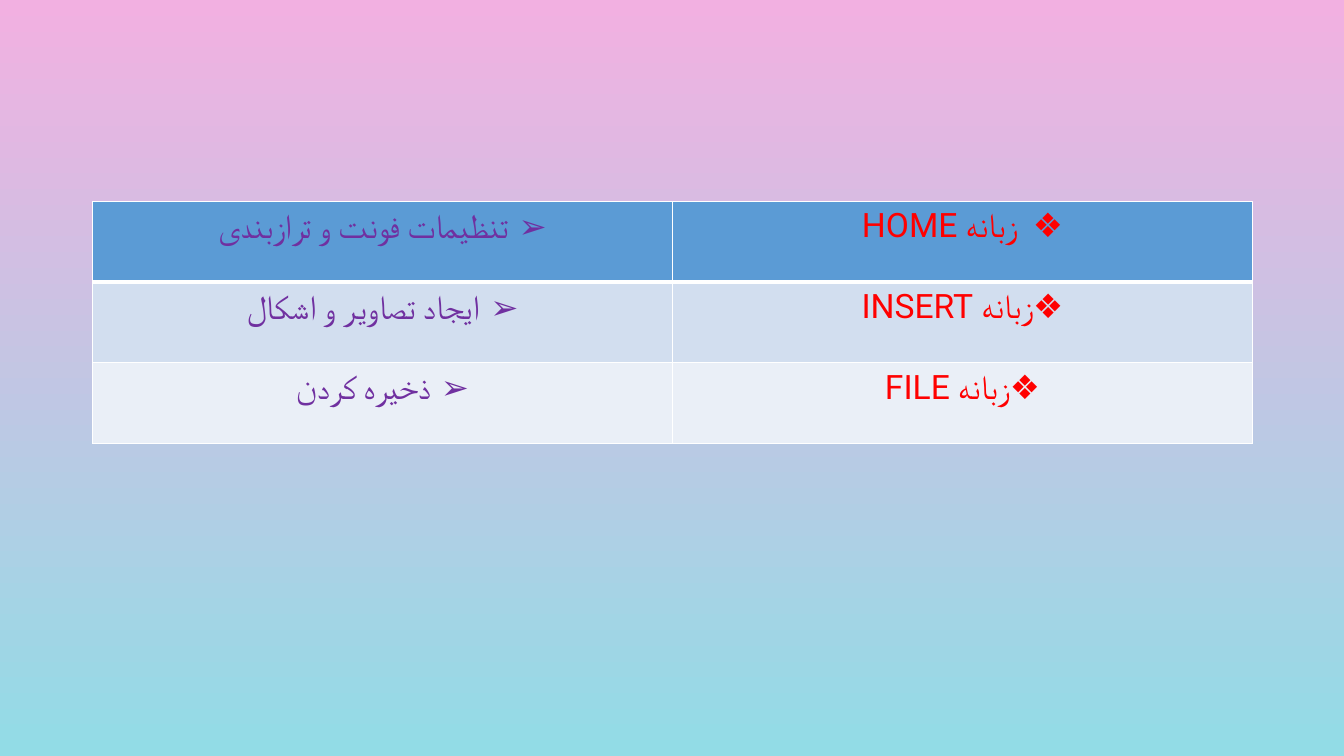
from lxml import etree
from pptx import Presentation
from pptx.dml.color import RGBColor
from pptx.enum import text
from pptx.oxml import ns
from pptx.util import Inches, Pt

TABS = [
    ("تنظیمات فونت و ترازبندی", " زبانه HOME"),
    ("ایجاد تصاویر و اشکال", "زبانه INSERT"),
    ("ذخیره کردن", "زبانه FILE"),
]
PURPLE = RGBColor(0x70, 0x30, 0xA0)
RED = RGBColor(0xFF, 0x00, 0x00)
WHITE = RGBColor(0xFF, 0xFF, 0xFF)
PINK = RGBColor(0xF2, 0xB0, 0xE1)
AQUA = RGBColor(0x92, 0xDC, 0xE6)
ROW_FILLS = [
    RGBColor(0x5B, 0x9B, 0xD5),
    RGBColor(0xD2, 0xDE, 0xEF),
    RGBColor(0xEA, 0xEF, 0xF7),
]
COLUMN_STYLES = [("➢", "Calibri", PURPLE), ("❖", "Roboto", RED)]
INDENTS = [(0.38, 0.38), (0.38, 0.31), (0.38, 0.31)]
LEFT, TOP, COLUMN_WIDTH, ROW_HEIGHT = 0.92, 2, 5.75, 0.8


def add_bullet(paragraph, bullet, indent):
    props = paragraph._p.get_or_add_pPr()
    props.set("rtl", "1")
    props.set("marL", str(Inches(indent)))
    props.set("indent", str(-Inches(indent)))
    etree.SubElement(props, ns.qn("a:buFont")).set("typeface", "Arial")
    etree.SubElement(props, ns.qn("a:buChar")).set("char", bullet)


def add_borders(cell, bottom_width):
    props = cell._tc.get_or_add_tcPr()
    widths = {"lnL": 1, "lnR": 1, "lnT": 1, "lnB": bottom_width}
    for position, (side, width) in enumerate(widths.items()):
        border = etree.Element(ns.qn(f"a:{side}"), w=str(Pt(width)))
        fill = etree.SubElement(border, ns.qn("a:solidFill"))
        etree.SubElement(fill, ns.qn("a:srgbClr")).set("val", str(WHITE))
        props.insert(position, border)


def write_cell(cell, wording, style, indent):
    bullet, font_name, color = style
    cell.text_frame.text = wording
    paragraph = cell.text_frame.paragraphs[0]
    paragraph.alignment = text.PP_ALIGN.CENTER
    add_bullet(paragraph, bullet, indent)
    run = paragraph.runs[0]
    run.font.size = Pt(24)
    run.font.bold = False
    run.font.color.rgb = color
    run.font.name = font_name
    complex_script = etree.SubElement(run._r.get_or_add_rPr(), ns.qn("a:cs"))
    complex_script.set("typeface", font_name)


def main():
    deck = Presentation()
    deck.slide_width, deck.slide_height = Inches(13.33), Inches(7.5)
    slide = deck.slides.add_slide(deck.slide_layouts[6])

    backdrop = slide.background.fill
    backdrop.gradient()
    backdrop.gradient_angle = 270
    for stop, color, position in zip(backdrop.gradient_stops, (PINK, AQUA), (0, 1)):
        stop.color.rgb = color
        stop.position = position

    row_count, column_count = len(TABS), len(COLUMN_STYLES)
    tab_table = slide.shapes.add_table(
        row_count, column_count, Inches(LEFT), Inches(TOP),
        Inches(COLUMN_WIDTH * column_count), Inches(ROW_HEIGHT * row_count),
    ).table
    for column in tab_table.columns:
        column.width = Inches(COLUMN_WIDTH)
    for row_index, wordings in enumerate(TABS):
        tab_table.rows[row_index].height = Inches(ROW_HEIGHT)
        for column_index, wording in enumerate(wordings):
            cell = tab_table.cell(row_index, column_index)
            write_cell(cell, wording, COLUMN_STYLES[column_index],
                       INDENTS[row_index][column_index])
            cell.fill.solid()
            cell.fill.fore_color.rgb = ROW_FILLS[row_index]
            add_borders(cell, 3 if row_index == 0 else 1)

    deck.save("out.pptx")


if __name__ == "__main__":
    main()
